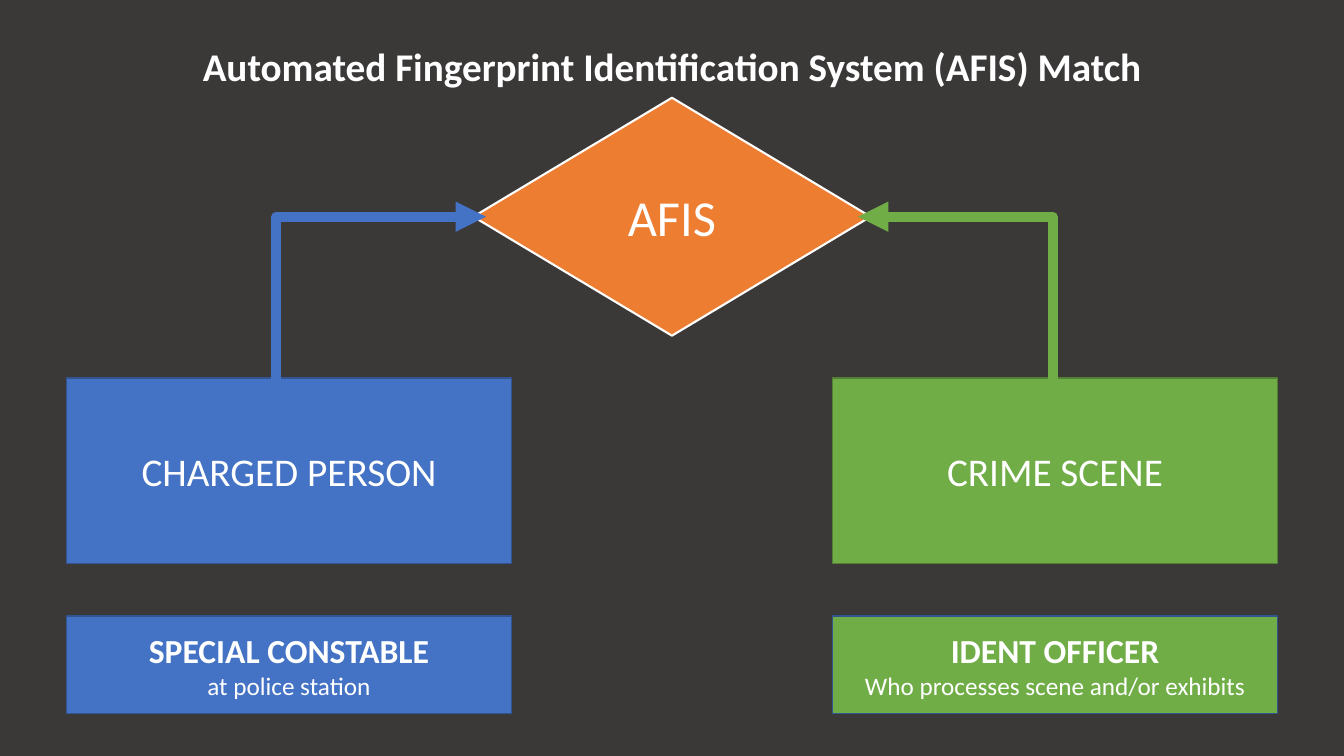
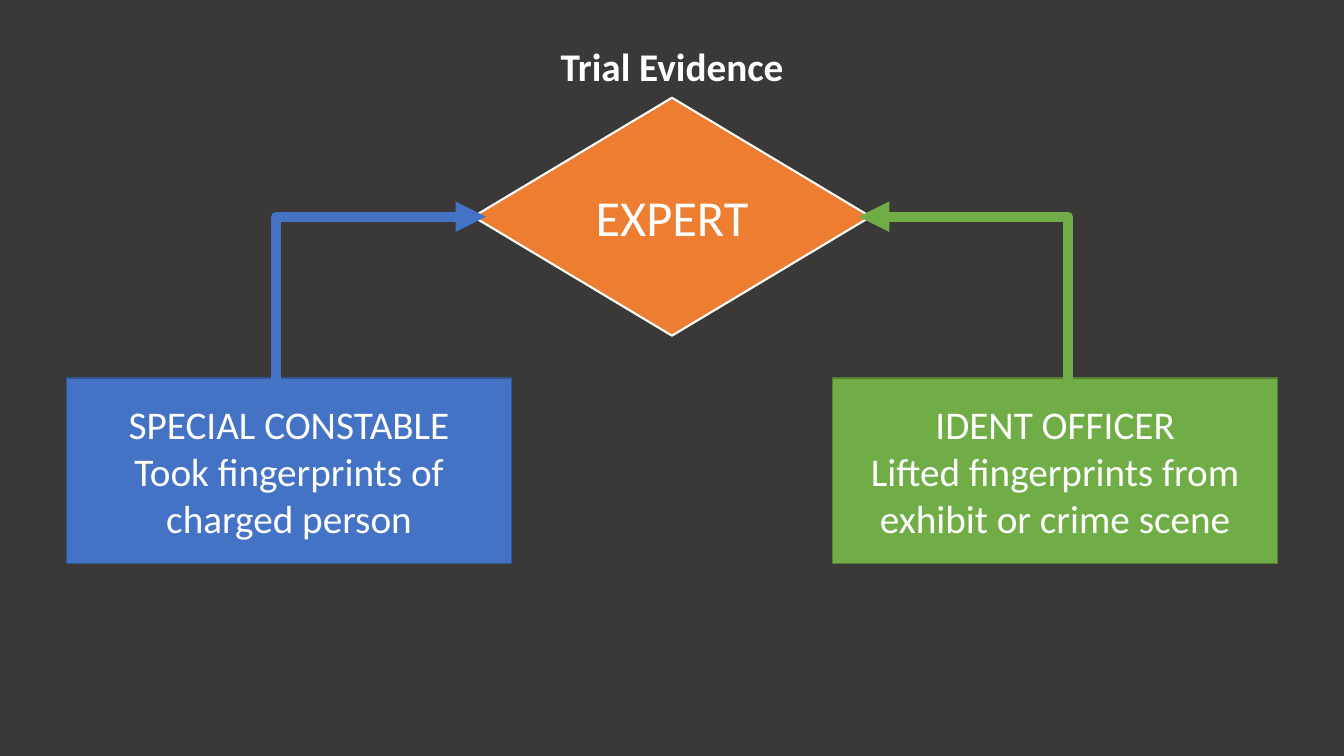
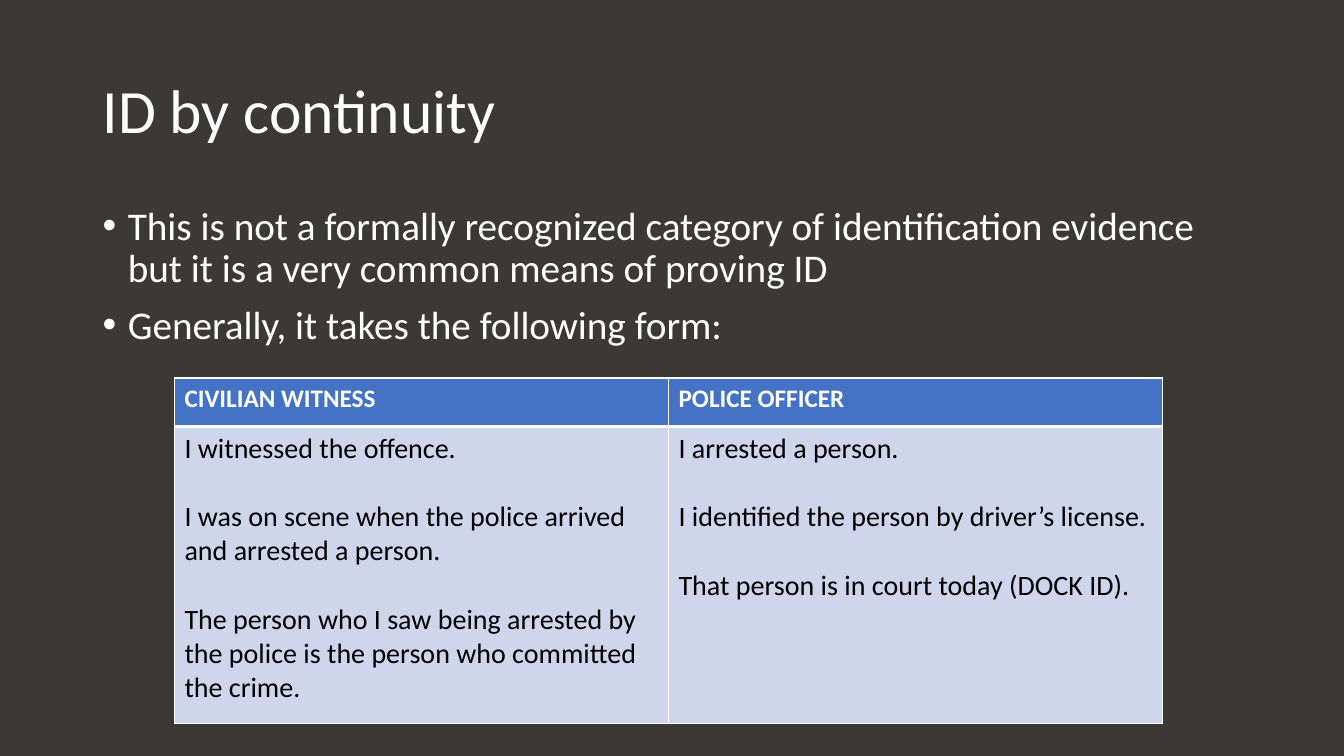
import pptx
import pptx.dml.color
import pptx.enum.shapes
import pptx.enum.text
import pptx.oxml
import pptx.oxml.ns
import pptx.util

RGBColor = pptx.dml.color.RGBColor
MSO_SHAPE = pptx.enum.shapes.MSO_SHAPE
PP_ALIGN = pptx.enum.text.PP_ALIGN
MSO_ANCHOR = pptx.enum.text.MSO_ANCHOR
Pt = pptx.util.Pt

CHARCOAL = RGBColor(0x3B, 0x38, 0x38)
WHITE = RGBColor(0xFF, 0xFF, 0xFF)
BLACK = RGBColor(0x00, 0x00, 0x00)
BLUE = RGBColor(0x44, 0x72, 0xC4)
DARK_BLUE = RGBColor(0x32, 0x54, 0x91)
GREEN = RGBColor(0x70, 0xAD, 0x47)
DARK_GREEN = RGBColor(0x53, 0x80, 0x35)
ORANGE = RGBColor(0xED, 0x7D, 0x31)
PALE_BLUE = RGBColor(0xCF, 0xD5, 0xEA)
FONT = "Calibri"

prs = pptx.Presentation()
prs.slide_width = pptx.util.Inches(13.33)
prs.slide_height = pptx.util.Inches(7.5)
prs.slide_master.background.fill.solid()
prs.slide_master.background.fill.fore_color.rgb = CHARCOAL
blank = prs.slide_layouts[6]

# All positions are percentages of the slide's width and height.
MARGIN = 6.9
TITLE_TOP = 5.33
BOX_W = 33.1
BOX_LEFT = 4.95
BOX_RIGHT = 100 - BOX_LEFT - BOX_W
MAIN_ROW = (50, 24.53)
ROLE_ROW = (81.47, 12.93)
DIAMOND_W = 29.56
DIAMOND_ROW = (12.93, 31.47)
ARROW_START_Y, ARROW_END_Y = 50.93, 28.67


def share(*percents):
    """Turn alternating width and height percentages into lengths."""
    sides = (prs.slide_width, prs.slide_height)
    return [int(sides[i % 2] * v / 100) for i, v in enumerate(percents)]


def write(tf, lines, align=PP_ALIGN.LEFT, color=WHITE, spacing=1.0):
    """Fill a text frame with one paragraph per (text, size, bold)."""
    tf.word_wrap = True
    for i, (text, size, bold) in enumerate(lines):
        p = tf.add_paragraph() if i else tf.paragraphs[0]
        p.alignment = align
        p.line_spacing = spacing
        r = p.add_run()
        r.text = text
        r.font.name = FONT
        r.font.size = Pt(size)
        r.font.bold = bold
        r.font.color.rgb = color


# Flowcharts: title, decision, boxes (left, row, fill, outline, lines), arrows
flowcharts = [
    ("Automated Fingerprint Identification System (AFIS) Match", "AFIS", [
        (BOX_LEFT, MAIN_ROW, BLUE, DARK_BLUE, [("CHARGED PERSON", 28, False)]),
        (BOX_RIGHT, MAIN_ROW, GREEN, DARK_GREEN, [("CRIME SCENE", 28, False)]),
        (BOX_LEFT, ROLE_ROW, BLUE, DARK_BLUE,
         [("SPECIAL CONSTABLE", 24, True), ("at police station", 18, False)]),
        (BOX_RIGHT, ROLE_ROW, GREEN, DARK_BLUE,
         [("IDENT OFFICER", 24, True),
          ("Who processes scene and/or exhibits", 18, False)]),
    ], [(BOX_LEFT, 36.16, BLUE), (92.8, 63.84, GREEN)]),
    ("Trial Evidence", "EXPERT", [
        (BOX_LEFT, MAIN_ROW, BLUE, DARK_BLUE,
         [("SPECIAL CONSTABLE", 28, False),
          ("Took fingerprints of charged person", 28, False)]),
        (BOX_RIGHT, MAIN_ROW, GREEN, DARK_GREEN,
         [("IDENT OFFICER", 28, False),
          ("Lifted fingerprints from exhibit or crime scene", 28, False)]),
    ], [(BOX_LEFT, 36.16, BLUE), (100 - BOX_LEFT, 63.9, GREEN)]),
]

for title, decision, boxes, arrows in flowcharts:
    s = prs.slides.add_slide(blank)
    sp = s.shapes.add_textbox(*share(MARGIN, TITLE_TOP, 100 - 2 * MARGIN, 7.6))
    sp.text_frame.vertical_anchor = MSO_ANCHOR.MIDDLE
    write(sp.text_frame, [(title, 28, True)], PP_ALIGN.CENTER, spacing=0.9)

    nodes = [(MSO_SHAPE.FLOWCHART_PROCESS, left, BOX_W, row, fill, outline, 1, lines)
             for left, row, fill, outline, lines in boxes]
    nodes.append((MSO_SHAPE.FLOWCHART_DECISION, (100 - DIAMOND_W) / 2, DIAMOND_W,
                  DIAMOND_ROW, ORANGE, WHITE, 1.5, [(decision, 36, False)]))
    for kind, left, width, (top, height), fill, outline, weight, lines in nodes:
        sp = s.shapes.add_shape(kind, *share(left, top, width, height))
        sp.shadow.inherit = False
        sp.fill.solid()
        sp.fill.fore_color.rgb = fill
        sp.line.color.rgb = outline
        sp.line.width = Pt(weight)
        sp.text_frame.vertical_anchor = MSO_ANCHOR.MIDDLE
        write(sp.text_frame, lines, PP_ALIGN.CENTER)

    for start_x, end_x, color in arrows:
        arrow = s.shapes.add_connector(
            pptx.enum.shapes.MSO_CONNECTOR.ELBOW,
            *share(start_x, ARROW_START_Y, end_x, ARROW_END_Y))
        arrow.line.color.rgb = color
        arrow.line.width = Pt(7.25)
        spPr = arrow._element.spPr
        ln = spPr.find(pptx.oxml.ns.qn("a:ln"))
        ln.append(pptx.oxml.parse_xml(
            f'<a:tailEnd {pptx.oxml.ns.nsdecls("a")} type="triangle"/>'))
        spPr.append(pptx.oxml.parse_xml(
            f'<a:effectLst {pptx.oxml.ns.nsdecls("a")}/>'))

# Identification by continuity
s = prs.slides.add_slide(blank)
sp = s.shapes.add_textbox(*share(MARGIN, TITLE_TOP, 100 - 2 * MARGIN, 19.33))
sp.text_frame.vertical_anchor = MSO_ANCHOR.MIDDLE
write(sp.text_frame, [("ID by continuity", 44, False)], spacing=0.9)

sp = s.shapes.add_textbox(*share(MARGIN, 26.67, 100 - 2 * MARGIN, 63.47))
write(sp.text_frame, [
    ("This is not a formally recognized category of identification evidence "
     "but it is a very common means of proving ID", 28, False),
    ("Generally, it takes the following form:", 28, False),
], spacing=0.9)
for p in sp.text_frame.paragraphs:
    p.space_before = Pt(10)
    pPr = p._p.get_or_add_pPr()
    indent = pptx.util.Inches(0.25)
    pPr.set("marL", str(indent))
    pPr.set("indent", str(-indent))
    for bullet in ('buFont {} typeface="Arial"', 'buChar {} char="•"'):
        pPr.append(pptx.oxml.parse_xml(
            f'<a:{bullet.format(pptx.oxml.ns.nsdecls("a"))}/>'))

testimony = [
    ("CIVILIAN WITNESS", [
        "I witnessed the offence.",
        "I was on scene when the police arrived and arrested a person.",
        "The person who I saw being arrested by the police is the person who "
        "committed the crime."]),
    ("POLICE OFFICER", [
        "I arrested a person.",
        "I identified the person by driver’s license.",
        "That person is in court today (DOCK ID)."]),
]
ROW_HEIGHTS = (6.4, 39.33)
table = s.shapes.add_table(
    2, len(testimony), *share(12.98, 50, 73.52, sum(ROW_HEIGHTS))).table
table.horz_banding = False
for row, height in zip(table.rows, ROW_HEIGHTS):
    row.height = share(0, height)[1]

for col, (witness, statements) in enumerate(testimony):
    head, body = table.cell(0, col), table.cell(1, col)
    write(head.text_frame, [(witness, 18, True)])
    write(body.text_frame, [(text, 20, False) for text in statements], color=BLACK)
    for p in body.text_frame.paragraphs[1:]:
        p.space_before = Pt(24.4)
    for cell, fill, thick_side in ((head, BLUE, "B"), (body, PALE_BLUE, "T")):
        tcPr = cell._tc.get_or_add_tcPr()
        for side in "LRTB":
            weight = Pt(3 if side == thick_side else 1)
            tcPr.append(pptx.oxml.parse_xml(
                f'<a:ln{side} {pptx.oxml.ns.nsdecls("a")} w="{weight}"><a:solidFill>'
                f'<a:srgbClr val="{WHITE}"/></a:solidFill></a:ln{side}>'))
        cell.fill.solid()
        cell.fill.fore_color.rgb = fill

prs.save("out.pptx")
